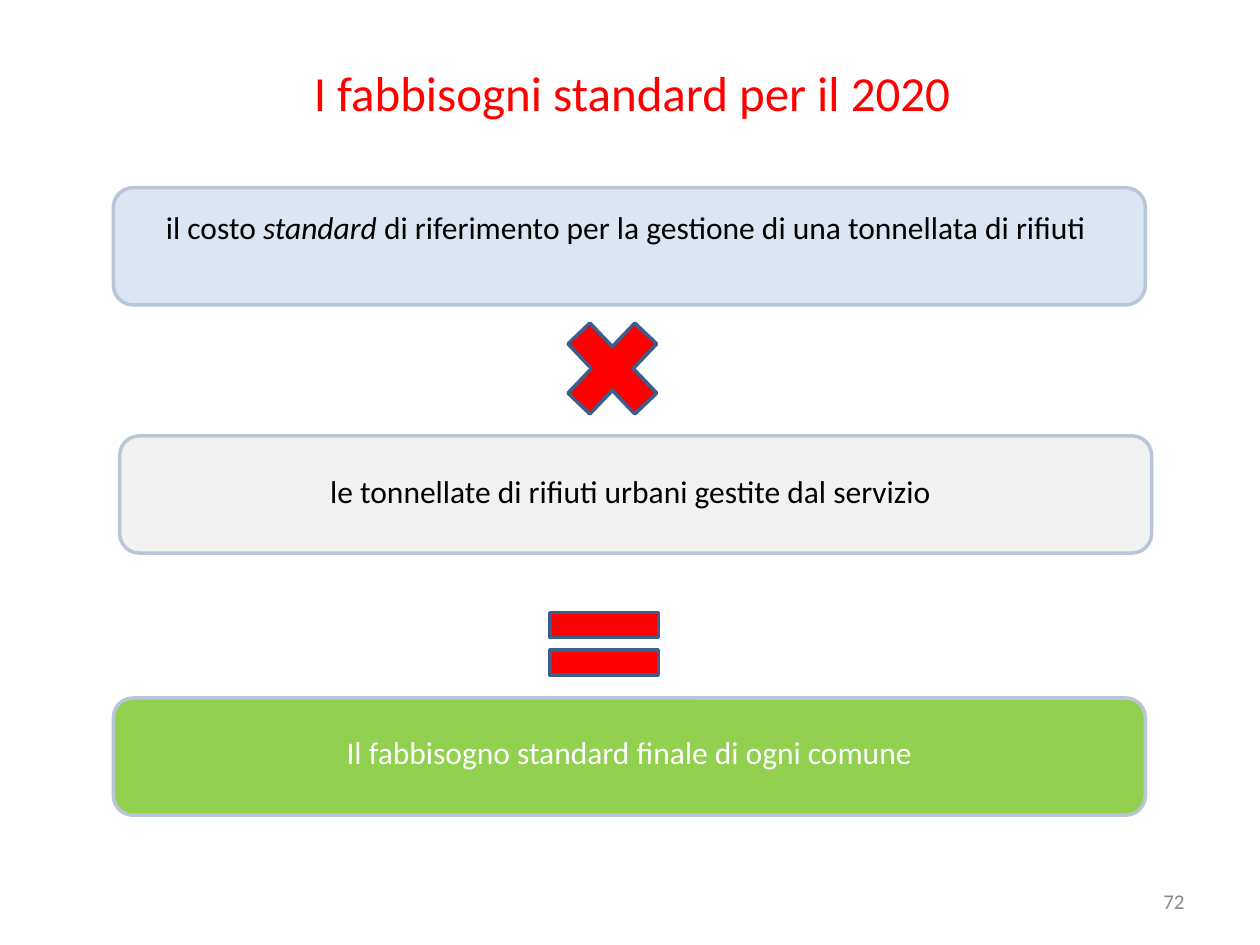
from dataclasses import dataclass

from pptx import Presentation
from pptx.dml.color import RGBColor as RGB
from pptx.enum.shapes import MSO_SHAPE as Kind
from pptx.enum.text import MSO_ANCHOR as Anchor, PP_ALIGN as Align
from pptx.util import Pt

PX = 9144  # 100 px to the inch
FONT = "Calibri"
HEX = {
    "red": "FF0000", "black": "000000", "white": "FFFFFF", "gray": "898989",
    "blue": "DCE6F2", "pale": "F2F2F2", "green": "92D050",
    "edge": "B9C6D8", "navy": "3A5F8C",
}


@dataclass
class Box:
    left: int
    top: int
    width: int
    height: int

    def emu(self) -> list[int]:
        return [n * PX for n in (self.left, self.top, self.width, self.height)]


@dataclass
class Form:
    kind: Kind
    box: Box
    fill: str
    line: str


@dataclass
class Label:
    box: Box
    runs: list[str]  # every second run is italic
    color: str
    size: int = 18
    align: Align = Align.CENTER
    anchor: Anchor = Anchor.TOP


def color(name: str) -> RGB:
    return RGB.from_string(HEX[name])


def draw_form(slide, form: Form) -> None:
    shape = slide.shapes.add_shape(form.kind, *form.box.emu())
    shape.shadow.inherit = False
    shape.fill.solid()
    shape.fill.fore_color.rgb = color(form.fill)
    shape.line.color.rgb = color(form.line)
    shape.line.width = Pt(2)


def write(shape, label: Label) -> None:
    shape.left, shape.top, shape.width, shape.height = label.box.emu()
    frame = shape.text_frame
    frame.word_wrap = True
    frame.vertical_anchor = label.anchor
    para = frame.paragraphs[0]
    para.alignment = label.align
    para.font.name = FONT
    para.font.size = Pt(label.size)
    para.font.color.rgb = color(label.color)
    for i, text in enumerate(label.runs):
        run = para.add_run()
        run.text = text
        if i % 2:
            run.font.italic = True


def panel(left: int, top: int, fill: str) -> Form:
    return Form(Kind.ROUNDED_RECTANGLE, Box(left, top, 819, 93), fill, "edge")


TITLE = Label(Box(50, 21, 903, 104), ["I fabbisogni standard per il 2020"],
              "red", 28, anchor=Anchor.MIDDLE)
FORMS = [
    panel(90, 554, "green"),
    panel(95, 346, "pale"),
    panel(90, 149, "blue"),
    Form(Kind.MATH_MULTIPLY, Box(435, 239, 102, 107), "red", "navy"),
    Form(Kind.MATH_EQUAL, Box(421, 469, 117, 84), "red", "navy"),
]
LABELS = [
    Label(Box(94, 160, 811, 67),
          ["il costo ", "standard ",
           "di riferimento per la gestione di una tonnellata di rifiuti "],
          "black"),
    Label(Box(62, 370, 877, 41),
          ["le tonnellate di rifiuti urbani gestite dal servizio"], "black"),
    Label(Box(90, 577, 819, 40),
          ["Il fabbisogno standard finale di ogni comune"], "white"),
    Label(Box(717, 695, 233, 40), ["72"], "gray", 12, Align.RIGHT,
          Anchor.MIDDLE),
]


def main() -> None:
    deck = Presentation()
    deck.slide_width, deck.slide_height = 1000 * PX, 750 * PX
    slide = deck.slides.add_slide(deck.slide_layouts[5])

    # Title
    write(slide.shapes.title, TITLE)

    # Panels and operators
    for form in FORMS:
        draw_form(slide, form)

    # Panel texts and page number
    for label in LABELS:
        write(slide.shapes.add_textbox(*label.box.emu()), label)

    deck.save("out.pptx")


if __name__ == "__main__":
    main()
